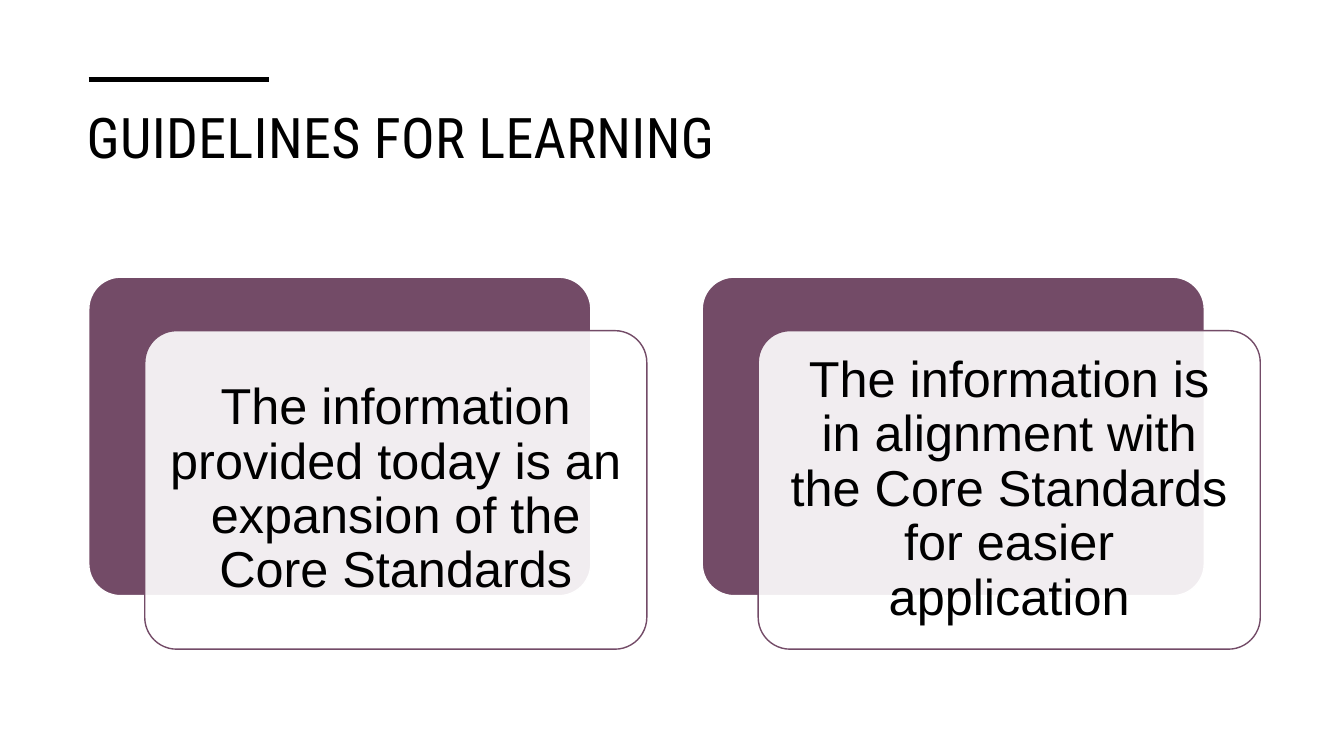
from dataclasses import dataclass

from lxml import etree
from pptx import Presentation
from pptx.dml.color import RGBColor
from pptx.enum.shapes import MSO_CONNECTOR, MSO_SHAPE
from pptx.enum.text import MSO_ANCHOR, MSO_AUTO_SIZE, PP_ALIGN
from pptx.oxml.ns import qn
from pptx.util import Pt

STRAIGHT = MSO_CONNECTOR.STRAIGHT
ROUNDED = MSO_SHAPE.ROUNDED_RECTANGLE
TOP, MIDDLE = MSO_ANCHOR.TOP, MSO_ANCHOR.MIDDLE
LEFT, CENTER = PP_ALIGN.LEFT, PP_ALIGN.CENTER
NO_AUTOFIT = MSO_AUTO_SIZE.NONE
TITLE_ONLY = 5


@dataclass(frozen=True)
class Theme:
    ink: RGBColor = RGBColor(0x00, 0x00, 0x00)
    paper: RGBColor = RGBColor(0xFF, 0xFF, 0xFF)
    plum: RGBColor = RGBColor(0x73, 0x4B, 0x67)
    title_font: str = "Roboto Condensed"
    body_font: str = "Arial"
    title_size: int = 40
    body_size: int = 36


THEME = Theme()

# Card geometry in points
CARD_LEFT, CARD_TOP = 63.4, 198
CARD_WIDTH, CARD_HEIGHT = 358.6, 227.5
CARD_PITCH = 438.2
FRONT_SHIFT_X, FRONT_SHIFT_Y = 40, 38.2
TEXT_MARGIN = 6.5

GUIDELINES = [
    "The information provided today is an expansion of the Core Standards",
    "The information is in alignment with the Core Standards for easier application",
]


def apply(target, values):
    for attribute, value in values.items():
        setattr(target, attribute, value)


def write(frame, text, font, size, inset, anchor, paragraph_format):
    """Fill a text frame with one formatted paragraph."""
    apply(frame, {"word_wrap": True, "auto_size": NO_AUTOFIT,
                  "vertical_anchor": anchor,
                  "margin_left": Pt(inset[0]), "margin_right": Pt(inset[0]),
                  "margin_top": Pt(inset[1]), "margin_bottom": Pt(inset[1])})
    paragraph = frame.paragraphs[0]
    apply(paragraph, paragraph_format)
    run = paragraph.add_run()
    run.text = text
    apply(run.font, {"name": font, "size": Pt(size)})
    run.font.color.rgb = THEME.ink
    return run


def add_title(slide, text):
    title = slide.shapes.title
    apply(title, {"left": Pt(54.7), "top": Pt(69.8),
                  "width": Pt(850.3), "height": Pt(82.8)})
    run = write(title.text_frame, text, THEME.title_font, THEME.title_size,
                (7.2, 3.6), TOP, {"alignment": LEFT})
    run.font._element.set("spc", "30")


def add_accent_rule(slide):
    rule = slide.shapes.add_connector(STRAIGHT, Pt(63.4), Pt(56.9), Pt(192.2), Pt(56.9))
    rule.line.color.rgb = THEME.ink
    rule.line.width = Pt(3.5)
    etree.SubElement(rule._element.spPr, qn("a:effectLst"))


def add_panel(group, left, top, fill, outline, opacity=100):
    panel = group.shapes.add_shape(ROUNDED, Pt(left), Pt(top),
                                   Pt(CARD_WIDTH), Pt(CARD_HEIGHT))
    panel.adjustments[0] = 0.1
    panel.shadow.inherit = False
    panel.fill.solid()
    panel.fill.fore_color.rgb = fill
    panel.line.color.rgb = outline
    panel.line.width = Pt(1)
    if opacity < 100:
        color = panel._element.spPr.find(qn("a:solidFill"))[0]
        etree.SubElement(color, qn("a:alpha"), val=str(opacity * 1000))


def add_card(slide, left, text):
    """Plum panel behind, translucent panel in front, text on top."""
    group = slide.shapes.add_group_shape()
    front_left, front_top = left + FRONT_SHIFT_X, CARD_TOP + FRONT_SHIFT_Y
    add_panel(group, left, CARD_TOP, THEME.plum, THEME.paper)
    add_panel(group, front_left, front_top, THEME.paper, THEME.plum, opacity=90)
    label = group.shapes.add_textbox(
        Pt(front_left + TEXT_MARGIN), Pt(front_top + TEXT_MARGIN),
        Pt(CARD_WIDTH - 2 * TEXT_MARGIN), Pt(CARD_HEIGHT - 2 * TEXT_MARGIN))
    write(label.text_frame, text, THEME.body_font, THEME.body_size,
          (10.8, 10.8), MIDDLE, {"alignment": CENTER, "line_spacing": 0.9})


def main():
    deck = Presentation()
    apply(deck, {"slide_width": Pt(960), "slide_height": Pt(540)})
    slide = deck.slides.add_slide(deck.slide_layouts[TITLE_ONLY])

    # Heading
    add_title(slide, "GUIDELINES FOR LEARNING")
    add_accent_rule(slide)

    # Guideline cards
    for column, guideline in enumerate(GUIDELINES):
        add_card(slide, CARD_LEFT + column * CARD_PITCH, guideline)

    deck.save("out.pptx")


if __name__ == "__main__":
    main()
